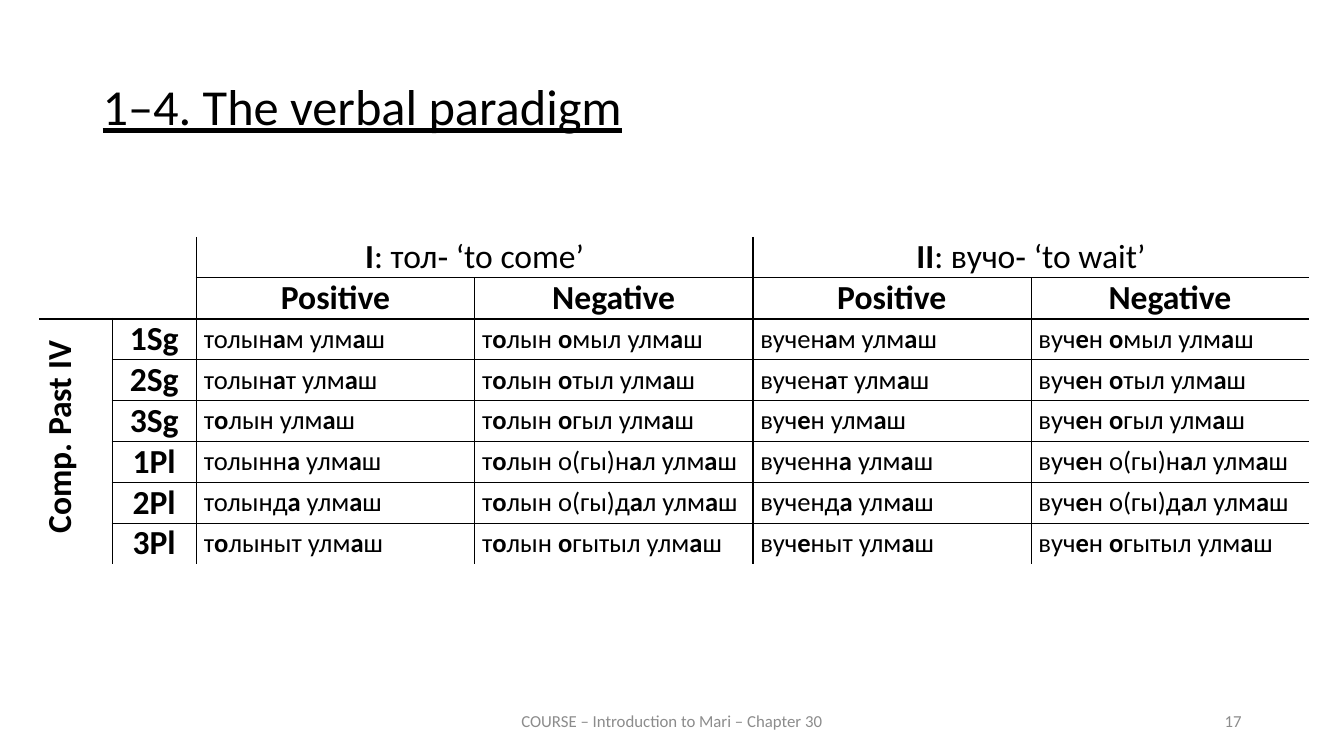
from lxml import etree
from pptx import Presentation
from pptx.dml.color import RGBColor
from pptx.enum.text import MSO_ANCHOR, MSO_AUTO_SIZE, PP_ALIGN
from pptx.oxml.ns import qn
from pptx.util import Cm, Pt

LEFT, MID, RIGHT, JUST = PP_ALIGN.LEFT, PP_ALIGN.CENTER, PP_ALIGN.RIGHT, PP_ALIGN.JUSTIFY
TOP, MIDDLE = MSO_ANCHOR.TOP, MSO_ANCHOR.MIDDLE
NO_FIT = MSO_AUTO_SIZE.NONE
NO_STYLE = "{2D5ABB26-0587-4C30-8999-92F81FD0307C}"


class Theme:
    font = "Calibri"
    ink = RGBColor(0x00, 0x00, 0x00)
    gray = RGBColor(0x8C, 0x8C, 0x8C)
    title, head, form, foot = Pt(36), Pt(24), Pt(19), Pt(12)
    thin, thick = Pt(0.5), Pt(1.5)


def write(frame, text, size=Theme.form, color=Theme.ink, align=LEFT, line=False):
    """Fill a text frame; parts between asterisks are bold."""
    para = frame.paragraphs[0]
    para.alignment = align
    for n, part in enumerate(text.split("*")):
        if part:
            run = para.add_run()
            run.text = part
            font = run.font
            font.name, font.size, font.bold = Theme.font, size, n % 2 == 1
            font.underline = line
            font.color.rgb = color
    return para


def edge(cell, side, width):
    """Draw one cell border, or none when the width is 0."""
    props = cell._tc.get_or_add_tcPr()
    ln = etree.SubElement(props, qn("a:ln" + side), w=str(int(width)))
    if width:
        fill = etree.SubElement(ln, qn("a:solidFill"))
        etree.SubElement(fill, qn("a:srgbClr"), val=str(Theme.ink))
    else:
        etree.SubElement(ln, qn("a:noFill"))


deck = Presentation()
deck.slide_width, deck.slide_height = Cm(33.87), Cm(19.05)
slide = deck.slides.add_slide(deck.slide_layouts[5])

# Title
title = slide.shapes.title
title.left, title.top, title.width, title.height = Cm(2.33), Cm(1.93), Cm(29.21), Cm(2.1)
frame = title.text_frame
frame.word_wrap, frame.auto_size, frame.vertical_anchor = True, NO_FIT, TOP
para = write(frame, "1–4. The verbal paradigm", size=Theme.title, align=JUST, line=True)
para.line_spacing = 0.9

# Footer and page number
for text, left, width, align in (
    ("COURSE – Introduction to Mari – Chapter 30", 11.22, 11.43, MID),
    ("17", 23.92, 7.62, RIGHT),
):
    frame = slide.shapes.add_textbox(Cm(left), Cm(17.66), Cm(width), Cm(1.01)).text_frame
    frame.word_wrap, frame.vertical_anchor = True, MIDDLE
    write(frame, text, size=Theme.foot, color=Theme.gray, align=align)

# Paradigm: person, then positive and negative of each verb; "улмаш" follows each form
forms = (
    ("1Sg", "толын*а*м", "т*о*лын *о*мыл", "вучен*а*м", "вуч*е*н *о*мыл"),
    ("2Sg", "толын*а*т", "т*о*лын *о*тыл", "вучен*а*т", "вуч*е*н *о*тыл"),
    ("3Sg", "т*о*лын", "т*о*лын *о*гыл", "вуч*е*н", "вуч*е*н *о*гыл"),
    ("1Pl", "толынн*а*", "т*о*лын о(гы)н*а*л", "вученн*а*", "вуч*е*н о(гы)н*а*л"),
    ("2Pl", "толынд*а*", "т*о*лын о(гы)д*а*л", "вученд*а*", "вуч*е*н о(гы)д*а*л"),
    ("3Pl", "т*о*лыныт", "т*о*лын *о*гытыл", "вуч*е*ныт", "вуч*е*н *о*гытыл"),
)
heads = {
    (0, 2): "*I*: тол‑ ‘to come’",
    (0, 4): "*II*: вучо‑ ‘to wait’",
    (2, 0): "*Comp. Past IV*",
}
for col in range(2, 6):
    heads[1, col] = ("*Positive*", "*Negative*")[col % 2]
for row, form in enumerate(forms, 2):
    heads[row, 1] = f"*{form[0]}*"

# Table grid
widths = [1.83, 2.13] + [7.01] * 4
rows, cols = len(forms) + 2, len(widths)
grid = slide.shapes.add_table(rows, cols, Cm(0.99), Cm(5.97), Cm(sum(widths)), Cm(1.03 * rows))
table = grid.table
table.first_row = table.horz_banding = False
table._tbl.tblPr.find(qn("a:tableStyleId")).text = NO_STYLE
for col, width in zip(table.columns, widths):
    col.width = Cm(width)
for row in table.rows:
    row.height = Cm(1.03)
for col in (2, 4):
    table.cell(0, col).merge(table.cell(0, col + 1))
table.cell(2, 0).merge(table.cell(rows - 1, 0))

# Rules: index of the line -> (width, first row or column it crosses)
thin, thick = Theme.thin, Theme.thick
down = {1: (thin, 2), 2: (thick, 0), 3: (thin, 1), 4: (thick, 0), 5: (thin, 1)}
over = {1: (thin, 2), 2: (thick, 0)} | {n: (thin, 1) for n in range(3, rows)}

# Cells
for row in range(rows):
    for col in range(cols):
        cell = table.cell(row, col)
        if cell.is_spanned:
            continue
        for side, rules, line, pos in (
            ("L", down, col, row),
            ("R", down, col + cell.span_width, row),
            ("T", over, row, col),
            ("B", over, row + cell.span_height, col),
        ):
            width, first = rules.get(line, (0, 0))
            edge(cell, side, width if pos >= first else 0)
        cell.fill.background()
        cell.margin_left = cell.margin_right = Cm(0.19)
        cell.margin_top = cell.margin_bottom = 0
        if (row, col) in heads:
            write(cell.text_frame, heads[row, col], size=Theme.head, align=MID)
        elif row > 1:
            cell.vertical_anchor = MIDDLE
            write(cell.text_frame, forms[row - 2][col - 1] + " улм*а*ш", align=JUST)

# Upright tense label
label = table.cell(2, 0)
label._tc.get_or_add_tcPr().set("vert", "vert270")
label.text_frame.paragraphs[0]._p.get_or_add_pPr().set("marL", str(Cm(0.2)))

deck.save("out.pptx")
